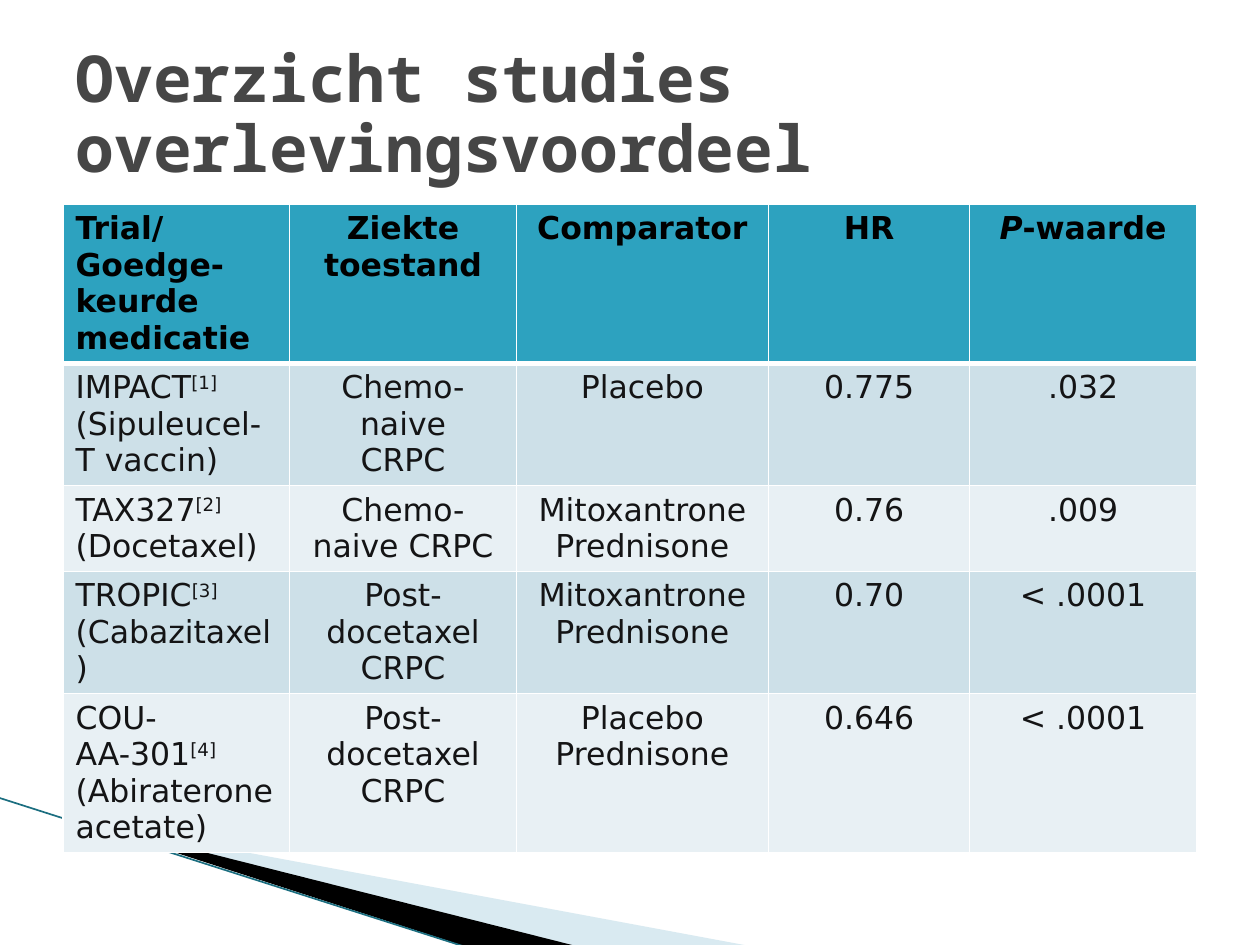
from lxml.etree import SubElement
from pptx import Presentation
from pptx.dml.color import RGBColor
from pptx.enum.shapes import MSO_CONNECTOR
from pptx.enum.text import MSO_ANCHOR, PP_ALIGN
from pptx.oxml.ns import qn
from pptx.util import Cm, Pt

BLACK = RGBColor(0x00, 0x00, 0x00)
WHITE = RGBColor(0xFF, 0xFF, 0xFF)
TITLE_GREY = RGBColor(0x46, 0x46, 0x46)
BODY_TEXT = RGBColor(0x14, 0x14, 0x15)
HEADER_FILL = RGBColor(0x2D, 0xA2, 0xBF)
BAND_FILLS = (RGBColor(0xCD, 0xE0, 0xE8), RGBColor(0xE8, 0xF0, 0xF4))
WEDGE_BLUE = RGBColor(0xA0, 0xCB, 0xDC)
LINE_TEAL = RGBColor(0x1B, 0x6E, 0x80)

TITLE_FONT = "Noto Sans Mono"
TABLE_FONT = "DejaVu Sans"

COLUMN_WIDTHS = (4.57, 4.57, 5.08, 4.06, 4.57)
ROW_HEIGHT = 1.04
HEADERS = ("Trial/Goedge-keurde medicatie", "Ziekte\ntoestand", "Comparator",
           "HR", "P-waarde")
STUDIES = (
    ("IMPACT[1]\n(Sipuleucel-T vaccin)", "Chemo-naive\nCRPC", "Placebo",
     "0.775", ".032"),
    ("TAX327[2]\n(Docetaxel)", "Chemo-naive CRPC", "Mitoxantrone\nPrednisone",
     "0.76", ".009"),
    ("TROPIC[3]\n(Cabazitaxel)", "Post-docetaxel CRPC",
     "Mitoxantrone\nPrednisone", "0.70", "< .0001"),
    ("COU-AA-301[4]\n(Abiraterone acetate)", "Post-docetaxel\nCRPC",
     "Placebo\vPrednisone", "0.646", "< .0001"),
)


def add_wedge(slide, points, color, opacity=None):
    """Draw a closed outline through points given in centimetres."""
    corners = [(Cm(x), Cm(y)) for x, y in points]
    builder = slide.shapes.build_freeform(*corners[0], scale=1.0)
    builder.add_line_segments(corners[1:], close=True)
    wedge = builder.convert_to_shape()
    wedge.shadow.inherit = False
    wedge.line.fill.background()
    wedge.fill.solid()
    wedge.fill.fore_color.rgb = color
    if opacity is not None:
        color_element = wedge.fill._xPr.find(".//" + qn("a:srgbClr"))
        SubElement(color_element, qn("a:alpha"), val=str(opacity * 1000))


def add_line(slide, start, end, color, width):
    x1, y1, x2, y2 = (Cm(value) for value in start + end)
    line = slide.shapes.add_connector(MSO_CONNECTOR.STRAIGHT, x1, y1, x2, y2)
    line.line.color.rgb = color
    line.line.width = Pt(width)
    SubElement(line._element.spPr, qn("a:effectLst"))


def format_title(slide, text):
    title = slide.shapes.title
    title.left, title.top = Cm(1.27), Cm(0.76)
    title.width, title.height = Cm(22.86), Cm(3.18)
    frame = title.text_frame
    frame.text = text
    frame.word_wrap = True
    frame.vertical_anchor = MSO_ANCHOR.MIDDLE
    paragraph = frame.paragraphs[0]
    paragraph.alignment = PP_ALIGN.LEFT
    paragraph.line_spacing = 0.9
    font = paragraph.runs[0].font
    font.name, font.size, font.bold = TITLE_FONT, Pt(36.9), True
    font.color.rgb = TITLE_GREY


def set_borders(cell, bottom_width):
    properties = cell._tc.get_or_add_tcPr()
    widths = {"a:lnL": 1, "a:lnR": 1, "a:lnT": 1, "a:lnB": bottom_width}
    for side, width in widths.items():
        border = SubElement(properties, qn(side), w=str(Pt(width)))
        fill = SubElement(border, qn("a:solidFill"))
        SubElement(fill, qn("a:srgbClr"), val=str(WHITE))


def split_last(paragraph, head, tail):
    """Put head and tail in two runs and return them."""
    paragraph.text = head
    second = paragraph.add_run()
    second.text = tail
    return paragraph.runs[0], second


def fill_cell(cell, text, fill, is_header, alignment):
    set_borders(cell, 3 if is_header else 1)
    cell.fill.solid()
    cell.fill.fore_color.rgb = fill
    cell.text_frame.text = text
    for paragraph in cell.text_frame.paragraphs:
        paragraph.alignment = alignment
        name, bracket, reference = paragraph.text.partition("[")
        if bracket:
            _, superscript = split_last(paragraph, name, bracket + reference)
            superscript.font._element.set("baseline", "30000")
        elif paragraph.text.startswith("P-"):
            symbol, _ = split_last(paragraph, "P", paragraph.text[1:])
            symbol.font.italic = True
        for run in paragraph.runs:
            run.font.name, run.font.size = TABLE_FONT, Pt(18)
            run.font.bold = is_header
            run.font.color.rgb = BLACK if is_header else BODY_TEXT


def add_study_table(slide):
    rows = (HEADERS,) + STUDIES
    table = slide.shapes.add_table(
        len(rows), len(HEADERS), Cm(1.27), Cm(4.12),
        Cm(sum(COLUMN_WIDTHS)), Cm(ROW_HEIGHT * len(rows))).table
    for column, width in zip(table.columns, COLUMN_WIDTHS):
        column.width = Cm(width)
    for row_index, texts in enumerate(rows):
        is_header = row_index == 0
        fill = HEADER_FILL if is_header else BAND_FILLS[(row_index - 1) % 2]
        for column_index, text in enumerate(texts):
            alignment = PP_ALIGN.CENTER if column_index else PP_ALIGN.LEFT
            fill_cell(table.cell(row_index, column_index), text, fill,
                      is_header, alignment)


def main():
    presentation = Presentation()
    presentation.slide_width, presentation.slide_height = Cm(25.4), Cm(19.05)
    slide = presentation.slides.add_slide(presentation.slide_layouts[5])
    format_title(slide, "Overzicht studies overlevingsvoordeel")
    add_wedge(slide, [(1.4, 16.52), (15.11, 19.07), (11.58, 19.07)],
              WEDGE_BLUE, opacity=40)
    add_wedge(slide, [(1.35, 16.48), (11.61, 19.07), (9.45, 19.1)], BLACK)
    add_line(slide, (-0.03, 16.08), (9.42, 19.1), LINE_TEAL, 0.95)
    add_study_table(slide)
    presentation.save("out.pptx")


if __name__ == "__main__":
    main()
